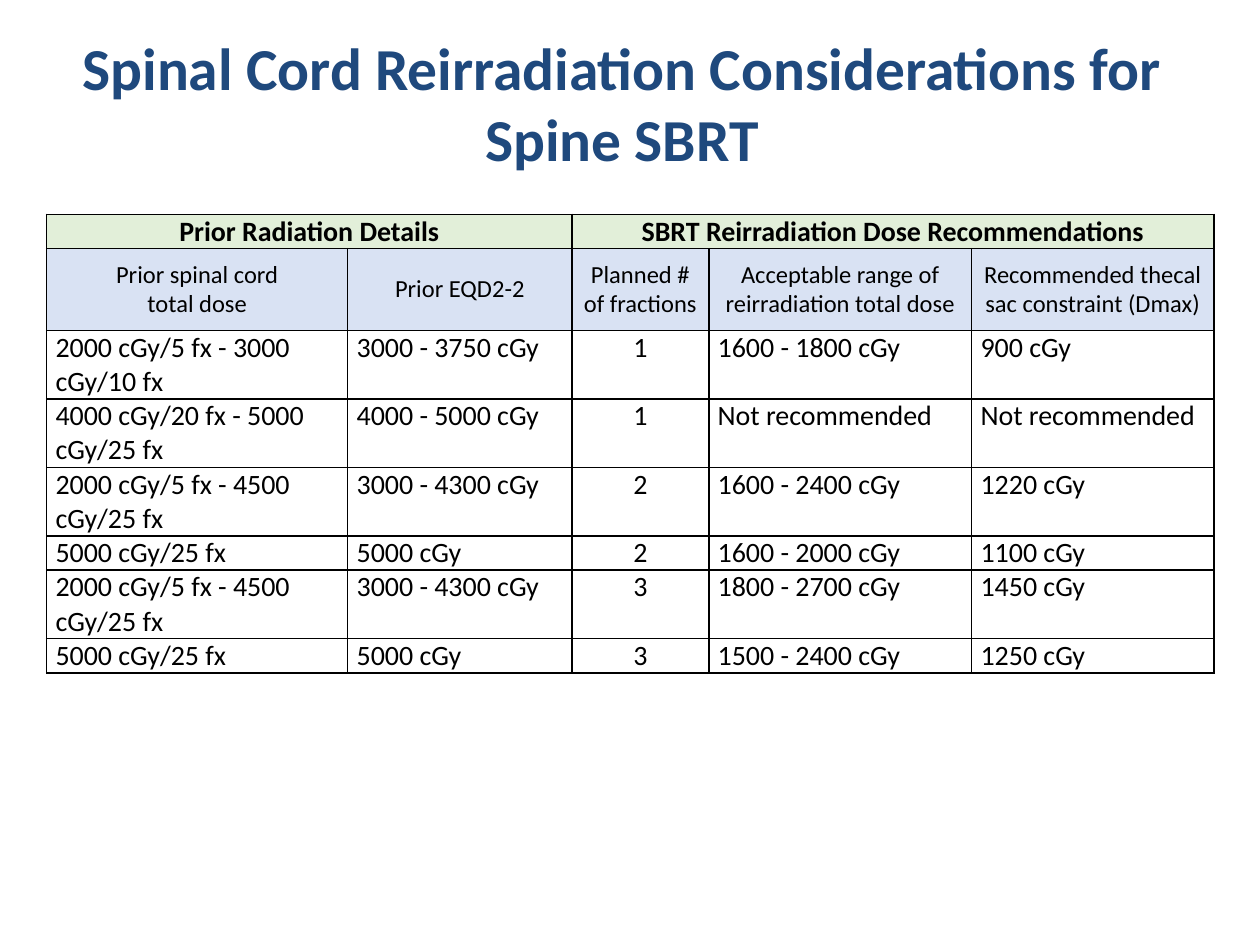
from lxml.etree import SubElement
from pptx import Presentation
from pptx.dml.color import RGBColor
from pptx.enum.text import MSO_ANCHOR, PP_ALIGN
from pptx.oxml.ns import qn
from pptx.util import Cm, Pt

TITLE = "Spinal Cord Reirradiation Considerations for Spine SBRT"
GROUPS = [("Prior Radiation Details", 0, 1),
          ("SBRT Reirradiation Dose Recommendations", 2, 4)]
HEADINGS = ["Prior spinal cord\ntotal dose", "Prior EQD2-2", "Planned # of fractions",
            "Acceptable range of\nreirradiation total dose",
            "Recommended thecal sac constraint (Dmax)"]
DOSES = [
    ["2000 cGy/5 fx - 3000 cGy/10 fx", "3000 - 3750 cGy", "1", "1600 - 1800 cGy", "900 cGy"],
    ["4000 cGy/20 fx - 5000 cGy/25 fx", "4000 - 5000 cGy", "1", "Not recommended", "Not recommended"],
    ["2000 cGy/5 fx - 4500 cGy/25 fx", "3000 - 4300 cGy", "2", "1600 - 2400 cGy", "1220 cGy"],
    ["5000 cGy/25 fx", "5000 cGy", "2", "1600 - 2000 cGy", "1100 cGy"],
    ["2000 cGy/5 fx - 4500 cGy/25 fx", "3000 - 4300 cGy", "3", "1800 - 2700 cGy", "1450 cGy"],
    ["5000 cGy/25 fx", "5000 cGy", "3", "1500 - 2400 cGy", "1250 cGy"],
]
COLUMN_WIDTHS = [6.07, 4.52, 2.76, 5.3, 4.88]
ROW_HEIGHTS = [0.66, 1.65, 1.14, 1.14, 1.14, 0.53, 1.14, 0.53]
FRACTIONS_COLUMN = 2


def rgb(value):
    """Turn a hex string into a colour."""
    return RGBColor.from_string(value)


class DoseSlide:
    """Holds the style and the current slide."""

    font = "Calibri"
    navy, black, white = "1F497D", "000000", "FFFFFF"
    green, blue = "E2EFD9", "D9E2F3"

    def __init__(self, slide):
        """Start on the given slide."""
        self.slide = slide

    def set_text(self, frame, text, size, color, bold=False, align=PP_ALIGN.LEFT):
        """Fill a text frame and format its runs."""
        frame.text = text
        for paragraph in frame.paragraphs:
            paragraph.alignment = align
            for run in paragraph.runs:
                run.font.name = self.font
                run.font.size = Pt(size)
                run.font.bold = bold
                run.font.color.rgb = rgb(color)

    def title(self, text, left, top, width, height):
        """Place the title placeholder."""
        heading = self.slide.shapes.title
        heading.left, heading.top = Cm(left), Cm(top)
        heading.width, heading.height = Cm(width), Cm(height)
        heading.text_frame.vertical_anchor = MSO_ANCHOR.MIDDLE
        self.set_text(heading.text_frame, text, 34, self.navy, True, PP_ALIGN.CENTER)

    def table(self, left, top, widths, heights):
        """Add an empty table with the given grid."""
        grid = self.slide.shapes.add_table(
            len(heights), len(widths), Cm(left), Cm(top),
            Cm(sum(widths)), Cm(sum(heights))).table
        for column, width in zip(grid.columns, widths):
            column.width = Cm(width)
        for row, height in zip(grid.rows, heights):
            row.height = Cm(height)
        for cell in grid.iter_cells():
            self.frame_cell(cell)
        return grid

    def frame_cell(self, cell):
        """Set the margins and black borders of a cell."""
        cell.margin_left = cell.margin_right = Cm(0.18)
        cell.margin_top = cell.margin_bottom = 0
        properties = cell._tc.get_or_add_tcPr()
        for side in ("a:lnL", "a:lnR", "a:lnT", "a:lnB"):
            border = SubElement(properties, qn(side), w=str(Pt(1)))
            fill = SubElement(border, qn("a:solidFill"))
            SubElement(fill, qn("a:srgbClr"), val=self.black)

    def cell(self, cell, text, fill, size=16, bold=False, align=PP_ALIGN.LEFT,
             anchor=MSO_ANCHOR.TOP):
        """Fill one cell and set its text."""
        cell.fill.solid()
        cell.fill.fore_color.rgb = rgb(fill)
        cell.vertical_anchor = anchor
        self.set_text(cell.text_frame, text, size, self.black, bold, align)

    def header(self, cell, text, fill, size, bold=False):
        """Set one centred header cell."""
        self.cell(cell, text, fill, size, bold, PP_ALIGN.CENTER, MSO_ANCHOR.MIDDLE)


def main():
    """Build and save the slide."""
    deck = Presentation()
    deck.slide_width, deck.slide_height = Cm(25.4), Cm(19.05)
    page = DoseSlide(deck.slides.add_slide(deck.slide_layouts[5]))
    page.title(TITLE, 0, 0.58, 25.07, 2.95)
    grid = page.table(0.94, 4.32, COLUMN_WIDTHS, ROW_HEIGHTS)
    for group, first, last in GROUPS:
        grid.cell(0, first).merge(grid.cell(0, last))
        page.header(grid.cell(0, first), group, page.green, 16, True)
    for column, heading in enumerate(HEADINGS):
        page.header(grid.cell(1, column), heading, page.blue, 14)
    for row, doses in enumerate(DOSES, start=2):
        for column, dose in enumerate(doses):
            align = PP_ALIGN.CENTER if column == FRACTIONS_COLUMN else PP_ALIGN.LEFT
            page.cell(grid.cell(row, column), dose, page.white, align=align)
    deck.save("out.pptx")


if __name__ == "__main__":
    main()
